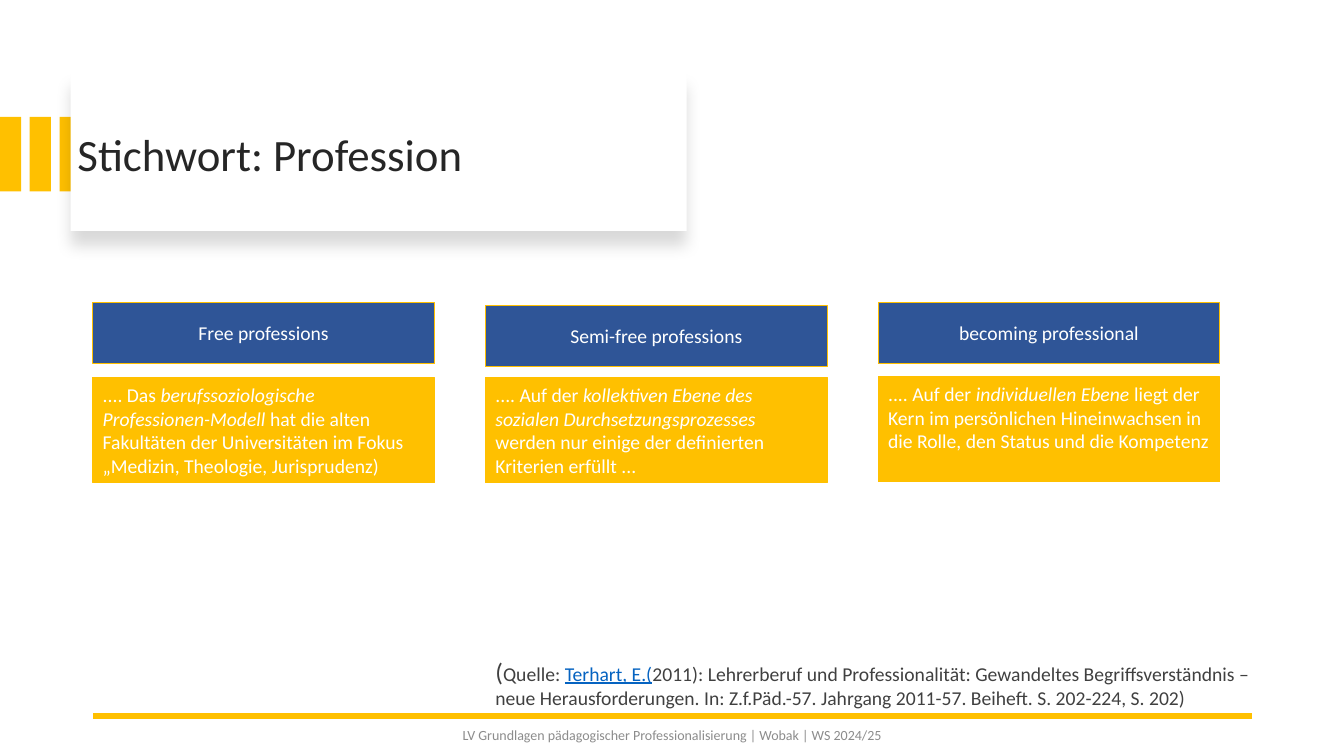
from lxml import etree
from pptx import Presentation
from pptx.dml.color import RGBColor
from pptx.enum.shapes import MSO_CONNECTOR, MSO_SHAPE
from pptx.enum.text import MSO_ANCHOR, PP_ALIGN
from pptx.oxml import parse_xml
from pptx.oxml.ns import nsdecls, qn
from pptx.util import Inches, Pt

WIDTH, HEIGHT = 13.33, 7.5
GOLD, BLUE, WHITE = "FFC000", "2F5597", "FFFFFF"
DARK, GREY, LINK, PALE = "262626", "404040", "0563C1", "8C8C8C"

# A run is (text, format values that differ from the box's own)
ITALIC = {"italic": True}
TITLE = [("Stichwort: Profession", {})]
COLUMNS = [
    {"header": "Free professions", "header_top": 3.0, "body_top": 3.75,
     "body": [(".... Das ", {}),
              ("berufssoziologische Professionen-Modell ", ITALIC),
              ("hat die alten Fakultäten der Universitäten im Fokus "
               "„Medizin, Theologie, Jurisprudenz)", {})]},
    {"header": "Semi-free professions", "header_top": 3.03, "body_top": 3.75,
     "body": [(".... Auf der ", {}),
              ("kollektiven Ebene des sozialen Durchsetzungsprozesses ", ITALIC),
              ("werden nur einige der definierten Kriterien erfüllt ...", {})]},
    {"header": "becoming professional", "header_top": 3.0, "body_top": 3.74,
     "body": [(".... Auf der ", {}),
              ("individuellen Ebene ", ITALIC),
              ("liegt der Kern im persönlichen Hineinwachsen in die Rolle, "
               "den Status und die Kompetenz", {})]},
]
CITATION = [
    ("(", {"size": 18}),
    ("Quelle: ", {}),
    ("Terhart, E.(", {"color": LINK, "underline": True}),
    ("2011): Lehrerberuf und Professionalität: Gewandeltes Begriffsverständnis –\n"
     "neue Herausforderungen. In: Z.f.Päd.-57. Jahrgang 2011-57. Beiheft. "
     "S. 202-224, S. 202)", {}),
]
FOOTER = [("LV Grundlagen pädagogischer Professionalisierung | Wobak | WS 2024/25", {})]

# Grid, in inches
COLUMN_LEFT, COLUMN_PITCH, COLUMN_WIDTH = 0.92, 3.895, 3.39
HEADER_HEIGHT, BODY_HEIGHT = 0.61, 1.04
STRIPE_COUNT, STRIPE_PITCH, STRIPE_WIDTH = 3, 0.295, 0.21
RULE_TOP, RULE_RIGHT = 7.1, 12.42
FOOTER_WIDTH = 4.5


def rgb(color):
    return RGBColor.from_string(color)


def add_rect(left, top, width, height, fill, line=None):
    rect = slide.shapes.add_shape(MSO_SHAPE.RECTANGLE, Inches(left), Inches(top),
                                  Inches(width), Inches(height))
    rect.shadow.inherit = False
    rect.fill.solid()
    rect.fill.fore_color.rgb = rgb(fill)
    if line:
        rect.line.color.rgb = rgb(line)
        rect.line.width = Pt(0.75)
    else:
        rect.line.fill.background()
    return rect


def add_box(left, top, width, height):
    return slide.shapes.add_textbox(Inches(left), Inches(top),
                                    Inches(width), Inches(height))


def write(shape, runs, size, color, align=PP_ALIGN.LEFT, anchor=MSO_ANCHOR.TOP,
          wrap=True):
    """Fill the shape with one paragraph; a newline in a run breaks the line."""
    frame = shape.text_frame
    frame.word_wrap = wrap
    frame.vertical_anchor = anchor
    paragraph = frame.paragraphs[0]
    paragraph.alignment = align
    for text, changes in runs:
        values = {"name": "Calibri", "size": size, "color": color, **changes}
        values["size"] = Pt(values["size"])
        ink = rgb(values.pop("color"))
        for number, part in enumerate(text.split("\n")):
            if number:
                paragraph.add_line_break()
            run = paragraph.add_run()
            run.text = part
            run.font.color.rgb = ink
            for key, value in values.items():
                setattr(run.font, key, value)
    return paragraph


def cast_shadow(shape):
    """Give the shape a soft grey shadow straight below it."""
    properties = shape.fill._xPr
    properties.remove(properties.find(qn("a:effectLst")))
    properties.append(parse_xml(
        f'<a:effectLst {nsdecls("a")}><a:outerShdw blurRad="{Pt(11)}" dist="{Pt(10)}" '
        'dir="5400000" algn="t" rotWithShape="0"><a:srgbClr val="000000">'
        '<a:alpha val="15000"/></a:srgbClr></a:outerShdw></a:effectLst>'))


presentation = Presentation()
presentation.slide_width, presentation.slide_height = Inches(WIDTH), Inches(HEIGHT)
slide = presentation.slides.add_slide(presentation.slide_layouts[6])

for index in range(STRIPE_COUNT):
    add_rect(index * STRIPE_PITCH, 1.16, STRIPE_WIDTH, 0.74, GOLD)
cast_shadow(add_rect(0.7, 0.72, 6.11, 1.57, WHITE))

rule = slide.shapes.add_connector(MSO_CONNECTOR.STRAIGHT, Inches(RULE_RIGHT),
                                  Inches(RULE_TOP), Inches(COLUMN_LEFT), Inches(RULE_TOP))
rule.line.color.rgb = rgb(GOLD)
rule.line.width = Pt(4.5)
etree.SubElement(rule._element.spPr, qn("a:effectLst"))

write(add_box(0.67, 1.21, 4.06, 0.64), TITLE, 32, DARK, wrap=False)
write(add_box(COLUMN_LEFT + COLUMN_PITCH, 6.46, 8.57, 0.64), CITATION, 14, GREY)

for index, column in enumerate(COLUMNS):
    left = COLUMN_LEFT + index * COLUMN_PITCH
    body = add_rect(left, column["body_top"], COLUMN_WIDTH, BODY_HEIGHT, GOLD, GOLD)
    write(body, column["body"], 14, WHITE)
    header = add_rect(left, column["header_top"], COLUMN_WIDTH, HEADER_HEIGHT, BLUE, GOLD)
    write(header, [(column["header"], {})], 14, WHITE, PP_ALIGN.CENTER, MSO_ANCHOR.MIDDLE)

footer_box = add_box((WIDTH - FOOTER_WIDTH) / 2, RULE_TOP, FOOTER_WIDTH, HEIGHT - RULE_TOP)
footer = write(footer_box, FOOTER, 10, PALE, PP_ALIGN.CENTER, MSO_ANCHOR.MIDDLE)
footer.line_spacing = 0.9

presentation.save("out.pptx")
